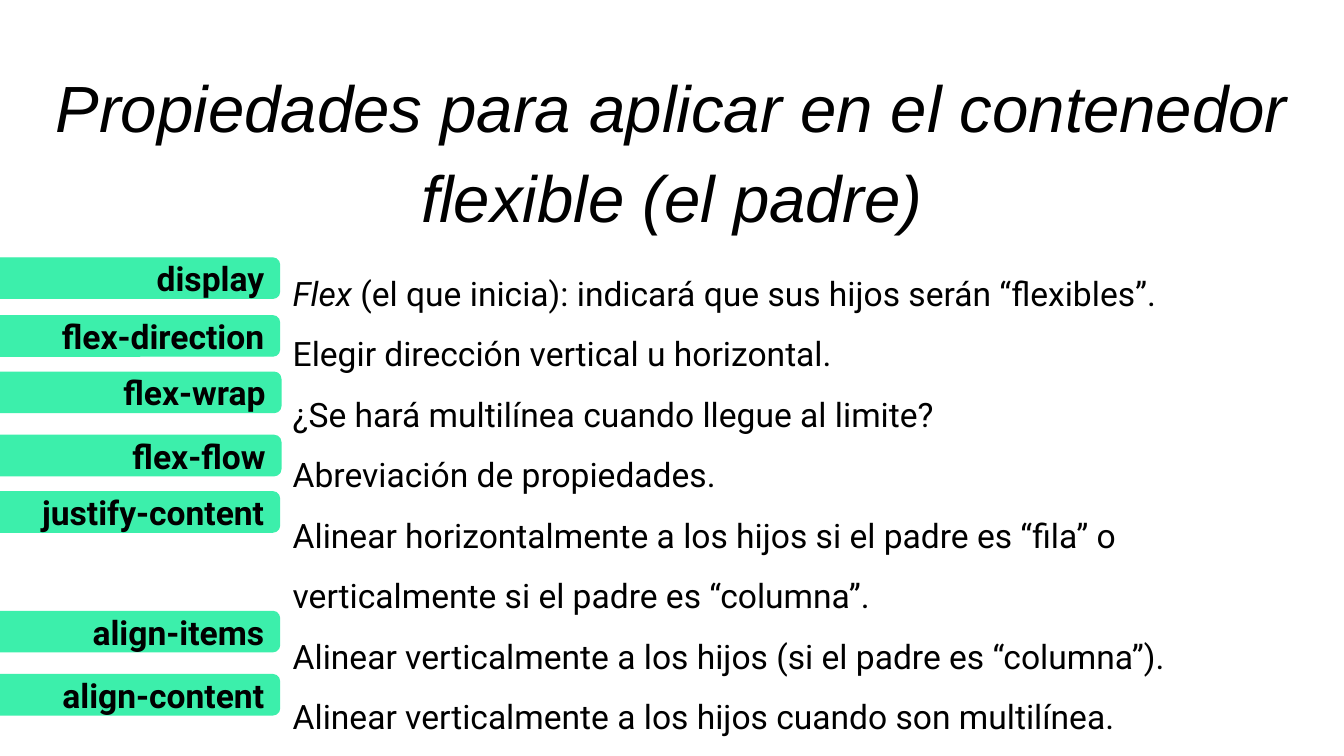
from pptx import Presentation
from pptx.dml.color import RGBColor
from pptx.enum.shapes import MSO_SHAPE as Shape
from pptx.enum.text import MSO_ANCHOR as Anchor, MSO_AUTO_SIZE as AutoSize, PP_ALIGN as Align
from pptx.util import Inches, Pt

COLORS = {"text": "000000", "tag": "3CEFAB"}


class FlexSlide:
    heading_font = "Arial"
    body_font = "Roboto"
    body_size = 18

    def __init__(self, deck):
        self.slide = deck.slides.add_slide(deck.slide_layouts[5])

    def color(self, name):
        return RGBColor.from_string(COLORS[name])

    def frame(self, shape, anchor):
        frame = shape.text_frame
        frame.word_wrap = True
        frame.auto_size = AutoSize.NONE
        frame.vertical_anchor = anchor
        frame.margin_left = frame.margin_right = Inches(0.1)
        frame.margin_top = frame.margin_bottom = Inches(0.1)
        return frame

    def run(self, paragraph, text, font, size, bold=False, italic=False):
        run = paragraph.add_run()
        run.text = text
        run.font.name = font
        run.font.size = Pt(size)
        run.font.bold = bold
        run.font.italic = italic
        run.font.color.rgb = self.color("text")

    def title(self, text, left, top, width, height):
        heading = self.slide.shapes.title
        heading.left, heading.top = Inches(left), Inches(top)
        heading.width, heading.height = Inches(width), Inches(height)
        paragraph = self.frame(heading, Anchor.TOP).paragraphs[0]
        paragraph.alignment = Align.CENTER
        paragraph.line_spacing = 1.15
        paragraph.space_after = Pt(12)
        self.run(paragraph, text, self.heading_font, 35, italic=True)

    def descriptions(self, entries, left, top, width, height):
        box = self.slide.shapes.add_textbox(
            Inches(left), Inches(top), Inches(width), Inches(height))
        frame = self.frame(box, Anchor.TOP)
        for index, entry in enumerate(entries):
            paragraph = frame.add_paragraph() if index else frame.paragraphs[0]
            paragraph.line_spacing = 1.5
            for text, italic in entry:
                self.run(paragraph, text, self.body_font, self.body_size, italic=italic)

    def tag(self, text, left, top):
        tag = self.slide.shapes.add_shape(
            Shape.ROUNDED_RECTANGLE, Inches(left), Inches(top), Inches(2.68), Inches(0.3))
        tag.shadow.inherit = False
        tag.adjustments[0] = 0.167
        tag.fill.solid()
        tag.fill.fore_color.rgb = self.color("tag")
        tag.line.color.rgb = self.color("tag")
        tag.line.width = Pt(0.75)
        paragraph = self.frame(tag, Anchor.MIDDLE).paragraphs[0]
        paragraph.alignment = Align.RIGHT
        self.run(paragraph, text, self.body_font, self.body_size, bold=True)


def main():
    deck = Presentation()
    deck.slide_width = Inches(10)
    deck.slide_height = deck.slide_width * 9 // 16
    page = FlexSlide(deck)

    descriptions = [
        [("Flex ", True), ("(el que inicia): indicará que sus hijos serán “flexibles”.", False)],
        [("Elegir dirección vertical u horizontal.", False)],
        [("¿Se hará multilínea cuando llegue al limite?", False)],
        [("Abreviación de propiedades.", False)],
        [("Alinear horizontalmente a los hijos si el padre es “fila” o "
          "verticalmente si el padre es “columna”.", False)],
        [("Alinear verticalmente a los hijos (si el padre es “columna”).", False)],
        [("Alinear verticalmente a los hijos cuando son multilínea.", False)],
    ]
    page.descriptions(descriptions, 2.08, 1.78, 7.76, 3.04)
    page.title("Propiedades para aplicar en el contenedor flexible (el padre)", 0, 0.31, 10, 0.52)

    properties = [
        ("display", -0.6, 1.92),
        ("flex-direction", -0.6, 2.35),
        ("flex-wrap", -0.59, 2.77),
        ("flex-flow", -0.59, 3.24),
        ("justify-content", -0.6, 3.66),
        ("align-items", -0.6, 4.55),
        ("align-content", -0.6, 5.02),
    ]
    for name, left, top in properties:
        page.tag(name, left, top)

    deck.save("out.pptx")


if __name__ == "__main__":
    main()
